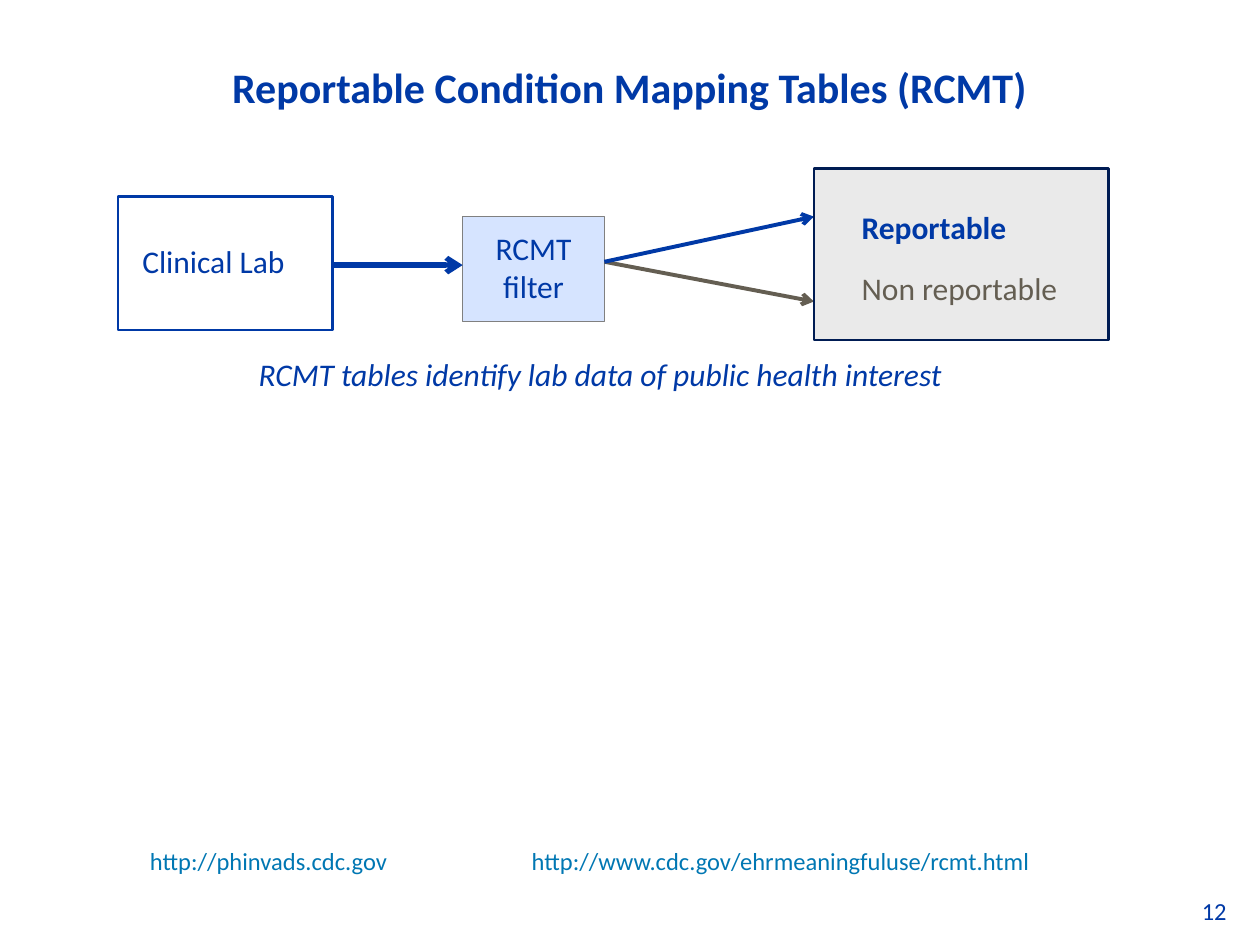
from dataclasses import dataclass
from typing import Optional

from lxml.etree import SubElement
from pptx import Presentation
from pptx.dml.color import RGBColor
from pptx.enum.shapes import MSO_CONNECTOR as Conn, MSO_SHAPE as Shape
from pptx.enum.text import MSO_ANCHOR as Anchor, PP_ALIGN as Align
from pptx.oxml.ns import qn
from pptx.util import Pt

COLORS = {
    "blue": "0039A6",
    "navy": "001C53",
    "link": "0077B3",
    "taupe": "645E52",
    "pale_blue": "D6E4FF",
    "light_gray": "EAEAEA",
    "gray": "808080",
}
FONT = "Calibri"


@dataclass
class Box:
    left: float
    top: float
    width: float
    height: float
    line: str
    line_width: float
    fill: Optional[str] = None


@dataclass
class Label:
    text: str
    left: float
    top: float
    width: float
    height: float
    size: float = 18
    color: str = "blue"
    bold: bool = False
    italic: bool = False
    align: Align = Align.LEFT
    anchor: Anchor = Anchor.TOP
    insets: tuple[float, float, float, float] = (7.2, 3.6, 7.2, 3.6)
    spacing: Optional[float] = None
    wrap: bool = True


@dataclass
class Arrow:
    x1: float
    y1: float
    x2: float
    y2: float
    color: str
    width: float


def rgb(name: str) -> RGBColor:
    return RGBColor.from_string(COLORS[name])


def write_text(tf, label: Label) -> None:
    """Fill a text frame, one paragraph per line of the label."""
    tf.word_wrap = label.wrap
    tf.vertical_anchor = label.anchor
    tf.margin_left, tf.margin_top, tf.margin_right, tf.margin_bottom = map(Pt, label.insets)
    tf.text = label.text
    for p in tf.paragraphs:
        p.alignment = label.align
        if label.spacing:
            p.line_spacing = label.spacing
        p.font.name = FONT
        p.font.size = Pt(label.size)
        p.font.bold = label.bold
        p.font.italic = label.italic
        p.font.color.rgb = rgb(label.color)


def draw_label(slide, label: Label) -> None:
    sp = slide.shapes.add_textbox(
        Pt(label.left), Pt(label.top), Pt(label.width), Pt(label.height))
    write_text(sp.text_frame, label)


def draw_box(slide, box: Box):
    sp = slide.shapes.add_shape(
        Shape.RECTANGLE, Pt(box.left), Pt(box.top), Pt(box.width), Pt(box.height))
    sp.shadow.inherit = False
    if box.fill:
        sp.fill.solid()
        sp.fill.fore_color.rgb = rgb(box.fill)
    else:
        sp.fill.background()
    sp.line.color.rgb = rgb(box.line)
    sp.line.width = Pt(box.line_width)
    return sp


def draw_arrow(slide, arrow: Arrow) -> None:
    cxn = slide.shapes.add_connector(
        Conn.STRAIGHT, Pt(arrow.x1), Pt(arrow.y1), Pt(arrow.x2), Pt(arrow.y2))
    cxn.line.color.rgb = rgb(arrow.color)
    cxn.line.width = Pt(arrow.width)
    SubElement(cxn.line._get_or_add_ln(), qn("a:tailEnd"), type="arrow")
    SubElement(cxn._element.spPr, qn("a:effectLst"))


LAB = Box(67.5, 112.3, 122.4, 76.3, "blue", 1.5)
FILTER = Box(264.4, 123.8, 81, 59.8, "gray", 0.75, "pale_blue")
RESULT = Box(465.1, 96.5, 168.5, 97.9, "navy", 1.5, "light_gray")

FILTER_TEXT = Label("RCMT\nfilter", FILTER.left, FILTER.top, FILTER.width, FILTER.height,
                    align=Align.CENTER, insets=(7.2, 7.2, 7.2, 3.6))

SPLIT = (FILTER.left + FILTER.width, 149.6)
ARROWS = [
    Arrow(LAB.left + LAB.width, 151.5, FILTER.left, 151.5, "blue", 3),
    Arrow(*SPLIT, RESULT.left, 172.3, "taupe", 2.25),
    Arrow(*SPLIT, RESULT.left, 123.8, "blue", 2.25),
]

LINK = dict(size=14, color="link", insets=(3.6,) * 4, spacing=1.14)
LABELS = [
    Label("12", 679.7, 508.3, 31, 24.2, size=14, wrap=False),
    Label("Reportable Condition Mapping Tables (RCMT)", 35.3, 23, 648.7, 53.3,
          size=24, bold=True, align=Align.CENTER, anchor=Anchor.MIDDLE),
    Label("Clinical Lab", 74.2, 134.6, 104.4, 29),
    Label("Reportable", 485.3, 115.2, 105.1, 29, bold=True),
    Label("Non reportable", 485.3, 150.1, 140.4, 29, color="taupe"),
    Label("RCMT tables identify lab data of public health interest",
          59.8, 196.6, 566.6, 38.2, italic=True, align=Align.CENTER, spacing=1.14),
    Label("http://phinvads.cdc.gov", 82.1, 477.4, 175, 25.2, **LINK),
    Label("http://www.cdc.gov/ehrmeaningfuluse/rcmt.html", 300.2, 477.4, 332.6, 25.2, **LINK),
]


def main() -> None:
    prs = Presentation()
    prs.slide_width, prs.slide_height = Pt(720), Pt(540)
    slide = prs.slides.add_slide(prs.slide_layouts[6])
    draw_box(slide, LAB)
    write_text(draw_box(slide, FILTER).text_frame, FILTER_TEXT)
    for arrow in ARROWS:
        draw_arrow(slide, arrow)
    draw_box(slide, RESULT)
    for label in LABELS:
        draw_label(slide, label)
    prs.save("out.pptx")


if __name__ == "__main__":
    main()
